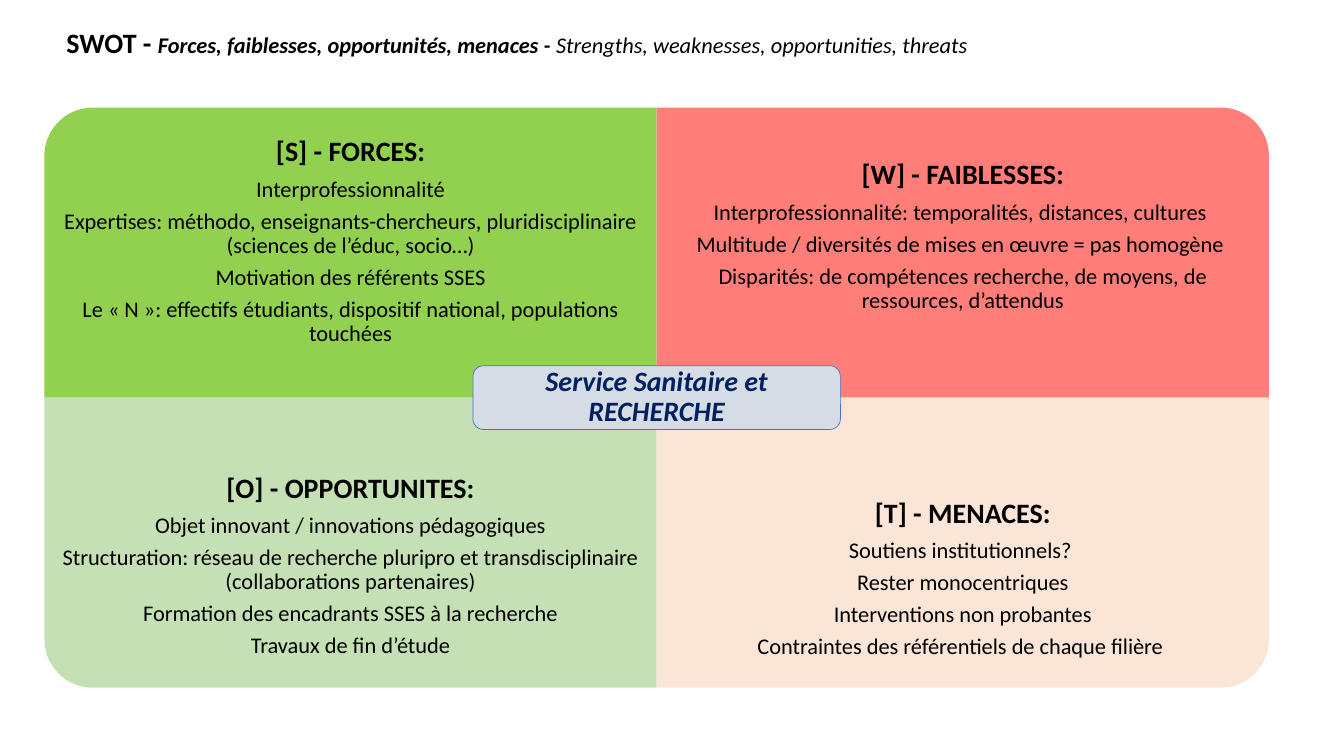
from pptx import Presentation
from pptx.dml.color import RGBColor
from pptx.enum.shapes import MSO_SHAPE
from pptx.enum.text import MSO_ANCHOR, MSO_AUTO_SIZE, PP_ALIGN
from pptx.util import Cm, Pt

ROUND_ONE, ROUND_ALL = MSO_SHAPE.ROUND_1_RECTANGLE, MSO_SHAPE.ROUNDED_RECTANGLE
TOP, MIDDLE = MSO_ANCHOR.TOP, MSO_ANCHOR.MIDDLE
LEFT, CENTER = PP_ALIGN.LEFT, PP_ALIGN.CENTER

BLACK = RGBColor(0x00, 0x00, 0x00)
NAVY = RGBColor(0x00, 0x20, 0x60)
BLUE = RGBColor(0x44, 0x72, 0xC4)
GREY = RGBColor(0xD6, 0xDC, 0xE5)
GREEN = RGBColor(0x92, 0xD0, 0x50)
RED = RGBColor(0xFF, 0x7E, 0x79)
PALE_GREEN = RGBColor(0xC5, 0xE0, 0xB4)
PEACH = RGBColor(0xFB, 0xE5, 0xD6)

# Grid of the four quadrants, in cm
X0, Y0, W, H = 1.12, 2.71, 15.43, 7.31


def add_run(p, text, size, bold=False, italic=False, color=BLACK):
    r = p.add_run()
    r.text = text
    r.font.name = "Calibri"
    r.font.size = Pt(size)
    r.font.bold = bold
    r.font.italic = italic
    r.font.color.rgb = color


def set_frame(tf, anchor, inset):
    tf.word_wrap = True
    tf.auto_size = MSO_AUTO_SIZE.NONE
    tf.vertical_anchor = anchor
    tf.margin_left = tf.margin_right = Cm(inset)
    tf.margin_top = tf.margin_bottom = Cm(0)


prs = Presentation()
prs.slide_width, prs.slide_height = Cm(33.87), Cm(19.05)
s = prs.slides.add_slide(prs.slide_layouts[5])

# Title
title = s.shapes.title
title.left, title.top, title.width, title.height = Cm(1.42), Cm(0.74), Cm(26.82), Cm(1.1)
set_frame(title.text_frame, TOP, 0.25)
p = title.text_frame.paragraphs[0]
p.alignment = LEFT
p.line_spacing = 0.9
add_run(p, "SWOT - ", 20, bold=True)
add_run(p, "Forces, faiblesses, opportunités, menaces - ", 16, bold=True, italic=True)
add_run(p, "Strengths, weaknesses, opportunities, threats", 16, italic=True)

# Quadrants: column, row, rotation, fill, text top, side inset, heading, points
quadrants = [
    (0, 0, 270, GREEN, 3.47, 0.23, "[S] - FORCES:", [
        "Interprofessionnalité",
        "Expertises: méthodo, enseignants-chercheurs, pluridisciplinaire (sciences de l’éduc, socio…)",
        "Motivation des référents SSES",
        "Le « N »: effectifs étudiants, dispositif national, populations touchées"]),
    (1, 0, 0, RED, 4.05, 0.23, "[W] - FAIBLESSES:", [
        "Interprofessionnalité: temporalités, distances, cultures ",
        "Multitude / diversités de mises en œuvre = pas homogène ",
        "Disparités: de compétences recherche, de moyens, de ressources, d’attendus"]),
    (0, 1, 180, PALE_GREEN, 11.94, 0.4, "[O] - OPPORTUNITES:", [
        "Objet innovant / innovations pédagogiques",
        "Structuration: réseau de recherche pluripro et transdisciplinaire (collaborations partenaires)",
        "Formation des encadrants SSES à la recherche",
        "Travaux de fin d’étude"]),
    (1, 1, 90, PEACH, 12.57, 0.4, "[T] - MENACES:", [
        "Soutiens institutionnels? ",
        "Rester monocentriques",
        "Interventions non probantes",
        "Contraintes des référentiels de chaque filière "]),
]
for col, row, angle, fill, text_top, inset, heading, points in quadrants:
    x, y = X0 + col * W, Y0 + row * H
    # A quarter turn swaps width and height around the same centre
    w, h = (H, W) if angle in (90, 270) else (W, H)
    sp = s.shapes.add_shape(ROUND_ONE, Cm(x + (W - w) / 2), Cm(y + (H - h) / 2), Cm(w), Cm(h))
    sp.rotation = angle
    sp.shadow.inherit = False
    sp.fill.solid()
    sp.fill.fore_color.rgb = fill
    sp.line.fill.background()

    tf = s.shapes.add_textbox(Cm(x), Cm(text_top), Cm(W), Cm(5.4)).text_frame
    set_frame(tf, TOP, inset)
    for i, text in enumerate([heading] + points):
        p = tf.add_paragraph() if i else tf.paragraphs[0]
        size = 16 if i else 20
        p.alignment = CENTER
        p.line_spacing = 0.9
        p.space_after = Pt(size * 0.35)
        add_run(p, text, size, bold=i == 0)

# Central label
w, h = 9.26, 1.61
sp = s.shapes.add_shape(ROUND_ALL, Cm(X0 + W - w / 2), Cm(Y0 + H - h / 2), Cm(w), Cm(h))
sp.shadow.inherit = False
sp.fill.solid()
sp.fill.fore_color.rgb = GREY
sp.line.color.rgb = BLUE
sp.line.width = Pt(0.5)
set_frame(sp.text_frame, MIDDLE, 0.2)
p = sp.text_frame.paragraphs[0]
p.alignment = CENTER
p.line_spacing = 0.9
add_run(p, "Service Sanitaire et RECHERCHE", 20, bold=True, italic=True, color=NAVY)

prs.save("out.pptx")
